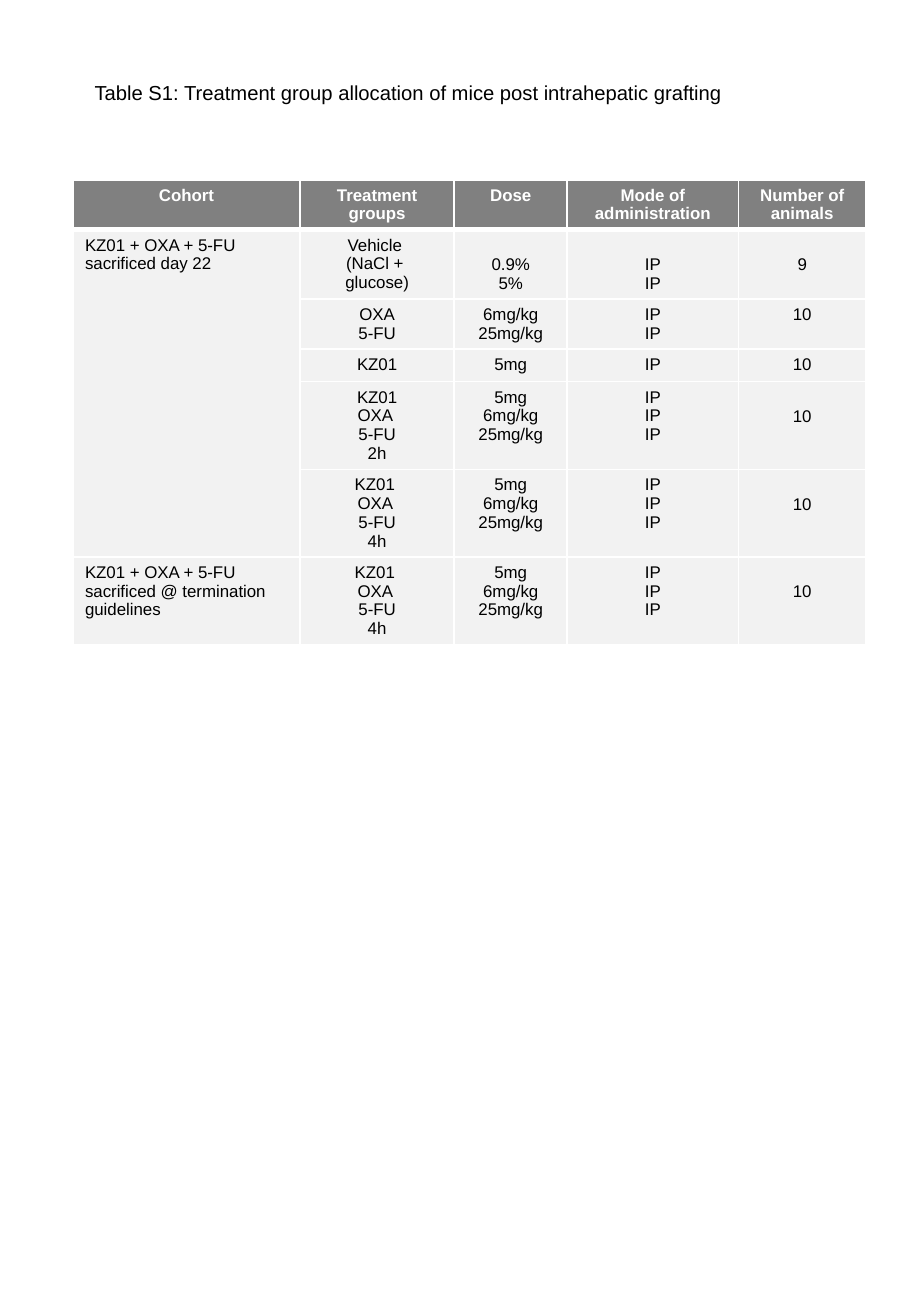
from pptx import Presentation
from pptx import util as u
from pptx.dml.color import RGBColor
from pptx.enum import text
from pptx.oxml import parse_xml
from pptx.oxml.ns import nsdecls

WHITE = RGBColor(0xFF, 0xFF, 0xFF)
BLACK = RGBColor(0, 0, 0)
GREY = RGBColor(0x80, 0x80, 0x80)
PALE = RGBColor(0xF2, 0xF2, 0xF2)
FONT = "Arial"
LINE = 0.16
PAD = 0.05

COLS = [1.87, 1.27, 0.93, 1.41, 1.05]
ROWS = [0.41, 0.57, 0.41, 0.27, 0.72, 0.72, 0.72]
HEAD = ["Cohort", "Treatment groups", "Dose", "Mode of administration",
        "Number of animals"]
COHORTS = {1: "KZ01 + OXA + 5-FU\nsacrificed day 22",
           6: "KZ01 + OXA + 5-FU\nsacrificed @ termination guidelines"}
TRIPLE = "5mg\n6mg/kg\n25mg/kg"
LATE = "KZ01 \nOXA \n5-FU\n4h"
GROUPS = [
    ("Vehicle \n(NaCl + \nglucose)", "0.9%\n5%", "IP\nIP", "9"),
    ("OXA\n5-FU", "6mg/kg\n25mg/kg", "IP\nIP", "10"),
    ("KZ01", "5mg", "IP", "10"),
    ("KZ01\nOXA \n5-FU\n2h", TRIPLE, "IP\nIP\nIP", "10"),
    (LATE, TRIPLE, "IP\nIP\nIP", "10"),
    (LATE, TRIPLE, "IP\nIP\nIP", "10"),
]


def write(para, words, size, color, bold=False):
    """Add one styled run to a paragraph."""
    run = para.add_run()
    run.text = words
    font = run.font
    font.name, font.size, font.bold = FONT, u.Pt(size), bold
    font.color.rgb = color


def edge(cell, top, base):
    """Draw white borders, with the top and bottom widths in points."""
    props = cell._tc.get_or_add_tcPr()
    for side, width in (("L", 1), ("R", 1), ("T", top), ("B", base)):
        props.append(parse_xml(
            f'<a:ln{side} {nsdecls("a")} w="{u.Pt(width)}"><a:solidFill>'
            f'<a:srgbClr val="{WHITE}"/></a:solidFill></a:ln{side}>'))


def lower(row, col):
    """Tell whether a cell's text starts one line down."""
    return (row == 1 and col > 1) or (row > 3 and col == 4)


def fill_cell(cell, row, col, words):
    """Style one cell and write its lines."""
    head = row == 0
    edge(cell, 3 if row == 1 else 1, 3 if head else 1)
    cell.fill.solid()
    cell.fill.fore_color.rgb = GREY if head else PALE
    cell.margin_top = u.Inches(PAD + LINE * lower(row, col))
    frame = cell.text_frame
    for num, line in enumerate(words.split("\n")):
        para = frame.add_paragraph() if num else frame.paragraphs[0]
        if head or col:
            para.alignment = text.PP_ALIGN.CENTER
        if line:
            write(para, line, 10, WHITE if head else BLACK, head)


def add_grid(slide, left, top):
    """Build the treatment table at the given corner."""
    grid = slide.shapes.add_table(
        len(ROWS), len(COLS), u.Inches(left), u.Inches(top),
        u.Inches(sum(COLS)), u.Inches(sum(ROWS))).table
    for col, width in zip(grid.columns, COLS):
        col.width = u.Inches(width)
    for row, height in zip(grid.rows, ROWS):
        row.height = u.Inches(height)
    grid.cell(1, 0).merge(grid.cell(5, 0))
    body = [(COHORTS.get(num, ""), *group)
            for num, group in enumerate(GROUPS, 1)]
    for row, line in enumerate([HEAD, *body]):
        for col, words in enumerate(line):
            fill_cell(grid.cell(row, col), row, col, words)


def add_title(slide, left, top, width, height):
    """Place the table caption in the given box."""
    box = slide.shapes.add_textbox(*map(u.Inches, (left, top, width, height)))
    frame = box.text_frame
    frame.word_wrap = False
    frame.auto_size = text.MSO_AUTO_SIZE.SHAPE_TO_FIT_TEXT
    write(frame.paragraphs[0], "Table S1: Treatment group allocation of mice "
          "post intrahepatic grafting", 12, BLACK)


def main():
    """Build and save the slide."""
    deck = Presentation()
    deck.slide_width, deck.slide_height = u.Inches(7.5), u.Inches(10.83)
    slide = deck.slides.add_slide(deck.slide_layouts[6])
    add_grid(slide, 0.6, 1.48)
    add_title(slide, 0.68, 0.61, 5.41, 0.3)
    deck.save("out.pptx")


if __name__ == "__main__":
    main()
